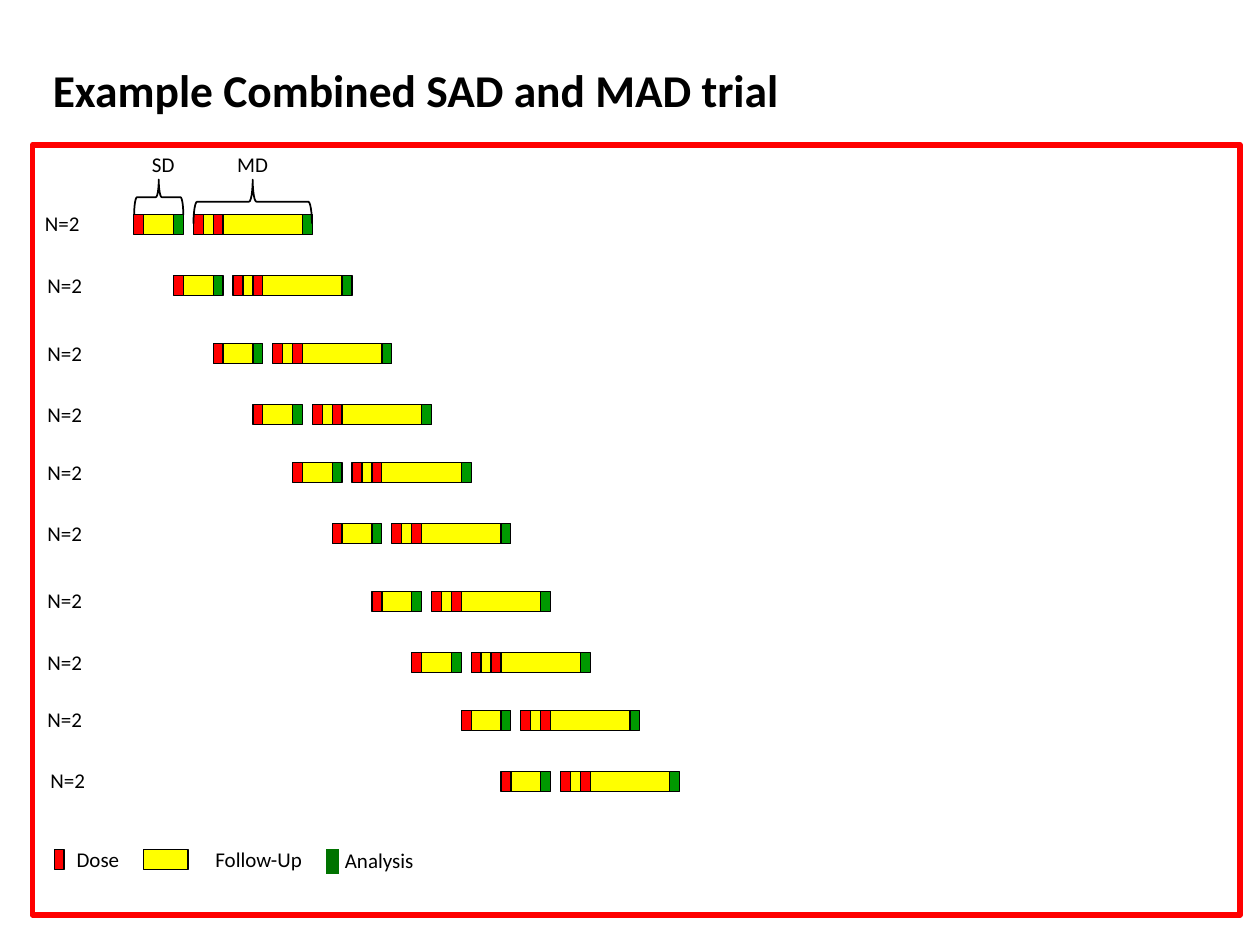
from dataclasses import dataclass

from lxml.etree import SubElement
from pptx import Presentation
from pptx.dml.color import RGBColor
from pptx.enum.shapes import MSO_CONNECTOR, MSO_SHAPE
from pptx.enum.text import MSO_ANCHOR, MSO_AUTO_SIZE, PP_ALIGN
from pptx.oxml.ns import qn
from pptx.shapes.autoshape import Shape
from pptx.slide import Slide
from pptx.util import Pt

BLACK = "000000"
RED = "FF0000"
YELLOW = "FFFF00"
GREEN = "009900"
DARK_GREEN = "007300"
DAY = 5.67
BAR_HEIGHT = 11.5
FIRST_DOSE = 76.5


@dataclass(frozen=True)
class Phase:
    start_day: int
    days: int
    fill: str


@dataclass(frozen=True)
class Cohort:
    start_day: int
    top: float
    label_left: float = 20


@dataclass(frozen=True)
class Label:
    text: str
    left: float
    top: float
    width: float
    height: float = 21.8
    align: PP_ALIGN = PP_ALIGN.LEFT
    wrap: bool = True
    trailing_space: bool = False


@dataclass(frozen=True)
class Area:
    left: float
    top: float
    width: float
    height: float


PHASES = [
    Phase(0, 1, RED),
    Phase(1, 3, YELLOW),
    Phase(4, 1, GREEN),
    Phase(6, 1, RED),
    Phase(7, 10, YELLOW),
    Phase(8, 1, RED),
    Phase(17, 1, GREEN),
]
COHORTS = [
    Cohort(0, 122.4, 18.6),
    Cohort(4, 157.5),
    Cohort(8, 196.4),
    Cohort(12, 231.3),
    Cohort(16, 264.4),
    Cohort(20, 299.3),
    Cohort(24, 337.9),
    Cohort(28, 373),
    Cohort(33, 405.9),
    Cohort(37, 440.9, 21.7),
]
BRACES = [Area(80.6, 98.6, 20.2, 28.1), Area(131.8, 81.4, 25.2, 67.7)]
LEGEND_BARS = [
    (Area(31, 485.3, DAY, BAR_HEIGHT), RED),
    (Area(82, 485.3, 25.5, BAR_HEIGHT), YELLOW),
]
LABELS = [
    Label("Dose", 36.7, 474, 45.4, 29, wrap=False, trailing_space=True),
    Label("Follow-Up", 116, 474, 71.3, 29, wrap=False, trailing_space=True),
    Label("Analysis", 190, 481, 56.2, wrap=False),
    Label("SD", 70.6, 82.8, 45.4, align=PP_ALIGN.CENTER),
    Label("MD", 121.7, 82.8, 45.4, align=PP_ALIGN.CENTER),
]


def color(value: str) -> RGBColor:
    return RGBColor.from_string(value)


def apply(target: object, values: dict) -> None:
    for name, value in values.items():
        setattr(target, name, value)


def place(shape: Shape, area: Area) -> None:
    apply(shape, {
        "left": Pt(area.left),
        "top": Pt(area.top),
        "width": Pt(area.width),
        "height": Pt(area.height),
    })


def format_font(span: object, size: float, bold: bool = False) -> None:
    apply(span.font, {"name": "Calibri", "size": Pt(size), "bold": bold})
    span.font.color.rgb = color(BLACK)


def draw_shape(
    page: Slide,
    kind: MSO_SHAPE,
    area: Area,
    fill: str | None = None,
    line: str = BLACK,
    line_width: float = 0.75,
) -> Shape:
    shape = page.shapes.add_shape(kind, 0, 0, 0, 0)
    place(shape, area)
    shape.shadow.inherit = False
    if fill:
        shape.fill.solid()
        shape.fill.fore_color.rgb = color(fill)
    else:
        shape.fill.background()
    shape.line.color.rgb = color(line)
    shape.line.width = Pt(line_width)
    return shape


def draw_label(page: Slide, label: Label) -> None:
    box = page.shapes.add_textbox(0, 0, 0, 0)
    apply(box.text_frame, {
        "word_wrap": label.wrap,
        "auto_size": MSO_AUTO_SIZE.SHAPE_TO_FIT_TEXT,
    })
    place(box, Area(label.left, label.top, label.width, label.height))
    para = box.text_frame.paragraphs[0]
    para.alignment = label.align
    span = para.add_run()
    span.text = label.text
    format_font(span, 12)
    if label.trailing_space:
        space = para.add_run()
        space.text = " "
        format_font(space, 18)


def draw_cohort(page: Slide, cohort: Cohort) -> None:
    for phase in PHASES:
        left = FIRST_DOSE + (cohort.start_day + phase.start_day) * DAY
        area = Area(left, cohort.top, phase.days * DAY, BAR_HEIGHT)
        draw_shape(page, MSO_SHAPE.RECTANGLE, area, phase.fill)
    draw_label(page, Label("N=2", cohort.label_left, cohort.top - 5.6, 49))


def draw_analysis_key(page: Slide) -> None:
    key = page.shapes.add_connector(
        MSO_CONNECTOR.STRAIGHT, Pt(190), Pt(485.3), Pt(190), Pt(499.5)
    )
    key.line.color.rgb = color(DARK_GREEN)
    key.line.width = Pt(7)
    SubElement(key.element.spPr, qn("a:effectLst"))


def write_title(page: Slide, text: str) -> None:
    title = page.shapes.title
    place(title, Area(30.2, 35.3, 580.3, 103))
    frame = title.text_frame
    frame.text = text
    apply(frame, {
        "margin_left": 0,
        "margin_top": 0,
        "margin_right": 0,
        "margin_bottom": 0,
        "word_wrap": True,
        "auto_size": MSO_AUTO_SIZE.NONE,
        "vertical_anchor": MSO_ANCHOR.TOP,
    })
    para = frame.paragraphs[0]
    para.alignment = PP_ALIGN.LEFT
    format_font(para.runs[0], 26, bold=True)


def main() -> None:
    deck = Presentation()
    apply(deck, {"slide_width": Pt(720), "slide_height": Pt(540)})
    page = deck.slides.add_slide(deck.slide_layouts[5])
    write_title(page, "Example Combined SAD and MAD trial")
    draw_shape(page, MSO_SHAPE.RECTANGLE, Area(18.6, 82.8, 690, 440),
               line=RED, line_width=3.25)
    for cohort in COHORTS:
        draw_cohort(page, cohort)
    for area in BRACES:
        brace = draw_shape(page, MSO_SHAPE.LEFT_BRACE, area, line_width=1)
        brace.rotation = 90
    for area, fill in LEGEND_BARS:
        draw_shape(page, MSO_SHAPE.RECTANGLE, area, fill)
    draw_analysis_key(page)
    for label in LABELS:
        draw_label(page, label)
    deck.save("out.pptx")


if __name__ == "__main__":
    main()
